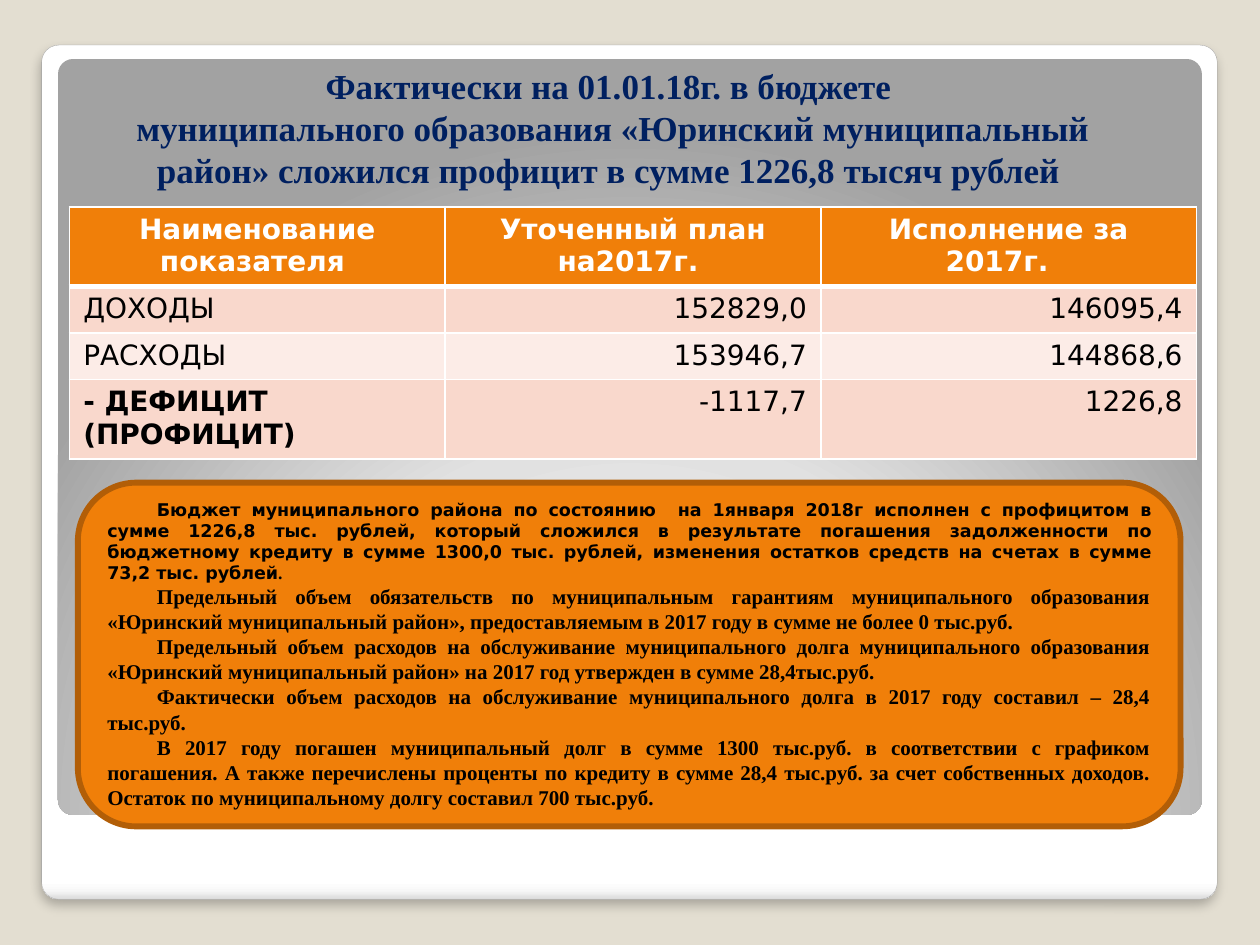
from dataclasses import dataclass

from pptx import Presentation, oxml
from pptx import util as u
from pptx.dml.color import RGBColor
from pptx.enum import shapes, text
from pptx.oxml import ns

Cm, Pt = u.Cm, u.Pt
WHITE = RGBColor(0xFF, 0xFF, 0xFF)
BLACK = RGBColor(0, 0, 0)
BEIGE = RGBColor(0xE3, 0xDE, 0xD1)
NAVY = RGBColor(0x00, 0x20, 0x60)
ORANGE = RGBColor(0xF0, 0x7F, 0x09)
BROWN = RGBColor(0xB2, 0x5E, 0x07)
GRAY = RGBColor(0xA4, 0xA4, 0xA4)
PINK = RGBColor(0xF9, 0xD8, 0xCC)
PALE = RGBColor(0xFC, 0xEC, 0xE7)
SANS, SERIF = "DejaVu Sans", "Times New Roman"
LEFT, CENTER = text.PP_ALIGN.LEFT, text.PP_ALIGN.CENTER
RIGHT, JUSTIFY = text.PP_ALIGN.RIGHT, text.PP_ALIGN.JUSTIFY

LINEAR = '<a:lin ang="5400000" scaled="0"/>'
RADIAL = ('<a:path path="circle"><a:fillToRect l="50000" t="175000" '
          'r="50000" b="-75000"/></a:path>')
SHADOW = ('<a:outerShdw {} blurRad="76200" dist="50800" dir="5400000" '
          'algn="t" rotWithShape="0"><a:srgbClr val="000000">'
          '<a:alpha val="25000"/></a:srgbClr></a:outerShdw>')


@dataclass
class Box:
    left: float
    top: float
    width: float
    height: float

    def lengths(self) -> list:
        return [Cm(v) for v in (self.left, self.top, self.width, self.height)]


@dataclass
class Run:
    content: str
    size: float
    name: str
    color: RGBColor
    bold: bool = True


@dataclass
class Row:
    height: float
    fill: RGBColor
    cells: tuple


def add_round_rect(slide, box: Box, radius: float):
    s = slide.shapes.add_shape(shapes.MSO_SHAPE.ROUNDED_RECTANGLE, *box.lengths())
    s.adjustments[0] = radius
    s.shadow.inherit = False
    s.line.fill.background()
    return s


def set_gradient(s, stops: list, direction: str) -> None:
    s.fill.gradient()
    spPr = s._element.spPr
    gs = "".join(f'<a:gs pos="{pos * 1000}"><a:srgbClr val="{color}"/></a:gs>'
                 for pos, color in stops)
    grad = oxml.parse_xml(f'<a:gradFill {ns.nsdecls("a")} rotWithShape="1">'
                          f'<a:gsLst>{gs}</a:gsLst>{direction}</a:gradFill>')
    spPr.replace(spPr.find(ns.qn("a:gradFill")), grad)


def set_line(s, color: RGBColor, width: float) -> None:
    s.line.color.rgb = color
    s.line.width = Pt(width)


def fill_paragraph(p, runs: list, align) -> None:
    p.alignment = align
    for run in runs:
        r = p.add_run()
        r.text = run.content
        r.font.color.rgb = run.color
        formats = {"size": Pt(run.size), "name": run.name, "bold": run.bold}
        for key, value in formats.items():
            setattr(r.font, key, value)


def set_borders(cell, widths: dict) -> None:
    tcPr = cell._tc.get_or_add_tcPr()
    for i, (side, width) in enumerate(widths.items()):
        tcPr.insert(i, oxml.parse_xml(
            f'<a:ln{side} {ns.nsdecls("a")} w="{Pt(width)}"><a:solidFill>'
            f'<a:srgbClr val="{WHITE}"/></a:solidFill></a:ln{side}>'))


def add_budget_table(slide, box: Box, rows: list) -> None:
    table = slide.shapes.add_table(len(rows), 3, *box.lengths()).table
    table.horz_banding = False
    for i, row in enumerate(rows):
        table.rows[i].height = Cm(row.height)
        for j, content in enumerate(row.cells):
            cell = table.cell(i, j)
            margins = {"margin_left": 0.28, "margin_right": 0.28,
                       "margin_top": 0.13, "margin_bottom": 0.13}
            for key, value in margins.items():
                setattr(cell, key, Cm(value))
            cell.fill.solid()
            cell.fill.fore_color.rgb = row.fill
            set_borders(cell, {"L": 1, "R": 1, "T": 3 if i == 1 else 1,
                               "B": 3 if i == 0 else 1})
            align = CENTER if i == 0 else RIGHT if j else LEFT
            color = WHITE if i == 0 else BLACK
            bold = i == 0 or (i == len(rows) - 1 and j == 0)
            tf = cell.text_frame
            for n, line in enumerate(content.split("\n")):
                p = tf.add_paragraph() if n else tf.paragraphs[0]
                fill_paragraph(p, [Run(line, 16, SANS, color, bold)], align)


def add_summary(slide, box: Box, paragraphs: list) -> None:
    s = add_round_rect(slide, box, 0.17)
    s.fill.solid()
    s.fill.fore_color.rgb = ORANGE
    set_line(s, BROWN, 3.35)
    tf = s.text_frame
    tf.word_wrap = True
    tf.vertical_anchor = text.MSO_ANCHOR.MIDDLE
    for n, runs in enumerate(paragraphs):
        p = tf.add_paragraph() if n else tf.paragraphs[0]
        fill_paragraph(p, runs, JUSTIFY)
        p._p.get_or_add_pPr().set("indent", str(Cm(1)))


def main() -> None:
    prs = Presentation()
    prs.slide_width, prs.slide_height = Cm(25.4), Cm(19.05)
    slide = prs.slides.add_slide(prs.slide_layouts[5])
    slide.background.fill.solid()
    slide.background.fill.fore_color.rgb = BEIGE

    card = add_round_rect(slide, Box(0.84, 0.91, 23.7, 17.22), 0.02)
    set_gradient(card, [(0, "FFFFFF"), (98, "FFFFFF"), (99, "F7F7F7"),
                        (100, "DADADA")], LINEAR)
    set_line(card, GRAY, 0.16)
    card._element.spPr.find(ns.qn("a:effectLst")).append(
        oxml.parse_xml(SHADOW.format(ns.nsdecls("a"))))
    panel = add_round_rect(slide, Box(1.17, 1.19, 23.06, 15.24), 0.02)
    set_gradient(panel, [(0, "FFFFFF"), (55, "E1E1E1"), (100, "A2A2A2")], RADIAL)

    title = slide.shapes.title
    slide.shapes._spTree.append(title._element)
    title.left, title.top, title.width, title.height = Box(
        1.98, 0.99, 20.75, 2.97).lengths()
    tf = title.text_frame
    formats = {"word_wrap": True, "auto_size": text.MSO_AUTO_SIZE.NONE,
               "vertical_anchor": text.MSO_ANCHOR.BOTTOM}
    for key, value in formats.items():
        setattr(tf, key, value)
    p = tf.paragraphs[0]
    fill_paragraph(p, [Run("Фактически на 01.01.18г. в бюджете ", 20, SERIF, NAVY)], CENTER)
    p.add_line_break()
    fill_paragraph(p, [Run(
        "муниципального образования «Юринский муниципальный район» "
        "сложился профицит в сумме 1226,8 тысяч рублей ", 20, SERIF, NAVY)], CENTER)

    add_budget_table(slide, Box(1.4, 4.17, 22.72, 5.08), [
        Row(1.6, ORANGE, ("Наименование показателя ", "Уточенный план на2017г. ",
                          "Исполнение за 2017г. \t")),
        Row(0.94, PINK, ("ДОХОДЫ \t", "152829,0", "146095,4")),
        Row(0.94, PALE, ("РАСХОДЫ \t", "153946,7", "144868,6")),
        Row(1.6, PINK, ("- ДЕФИЦИТ\n(ПРОФИЦИТ) \t", "-1117,7", "1226,8")),
    ])

    lead = ("Бюджет муниципального района по состоянию  на 1января 2018г исполнен с "
            "профицитом в сумме 1226,8 тыс. рублей, который сложился в результате "
            "погашения задолженности по бюджетному кредиту в сумме 1300,0 тыс. рублей, "
            "изменения остатков средств на счетах в сумме 73,2 тыс. рублей")
    details = [
        "Предельный объем обязательств по муниципальным гарантиям муниципального "
        "образования «Юринский муниципальный район», предоставляемым в 2017 году "
        "в сумме не более 0 тыс.руб.",
        "Предельный объем расходов на обслуживание муниципального долга муниципального "
        "образования «Юринский муниципальный район» на 2017 год утвержден в сумме "
        "28,4тыс.руб. ",
        "Фактически объем расходов на обслуживание муниципального долга в 2017 году "
        "составил – 28,4 тыс.руб.",
        "В 2017 году погашен муниципальный долг в сумме 1300 тыс.руб. в соответствии "
        "с графиком погашения. А также перечислены проценты по кредиту в сумме 28,4 "
        "тыс.руб. за счет собственных доходов. Остаток по муниципальному долгу "
        "составил 700 тыс.руб. ",
    ]
    add_summary(slide, Box(1.57, 9.73, 22.23, 6.93), [
        [Run(lead, 10, SANS, BLACK), Run(".", 10, SERIF, BLACK)],
        *([Run(line, 12, SERIF, BLACK)] for line in details),
    ])
    prs.save("out.pptx")


if __name__ == "__main__":
    main()
